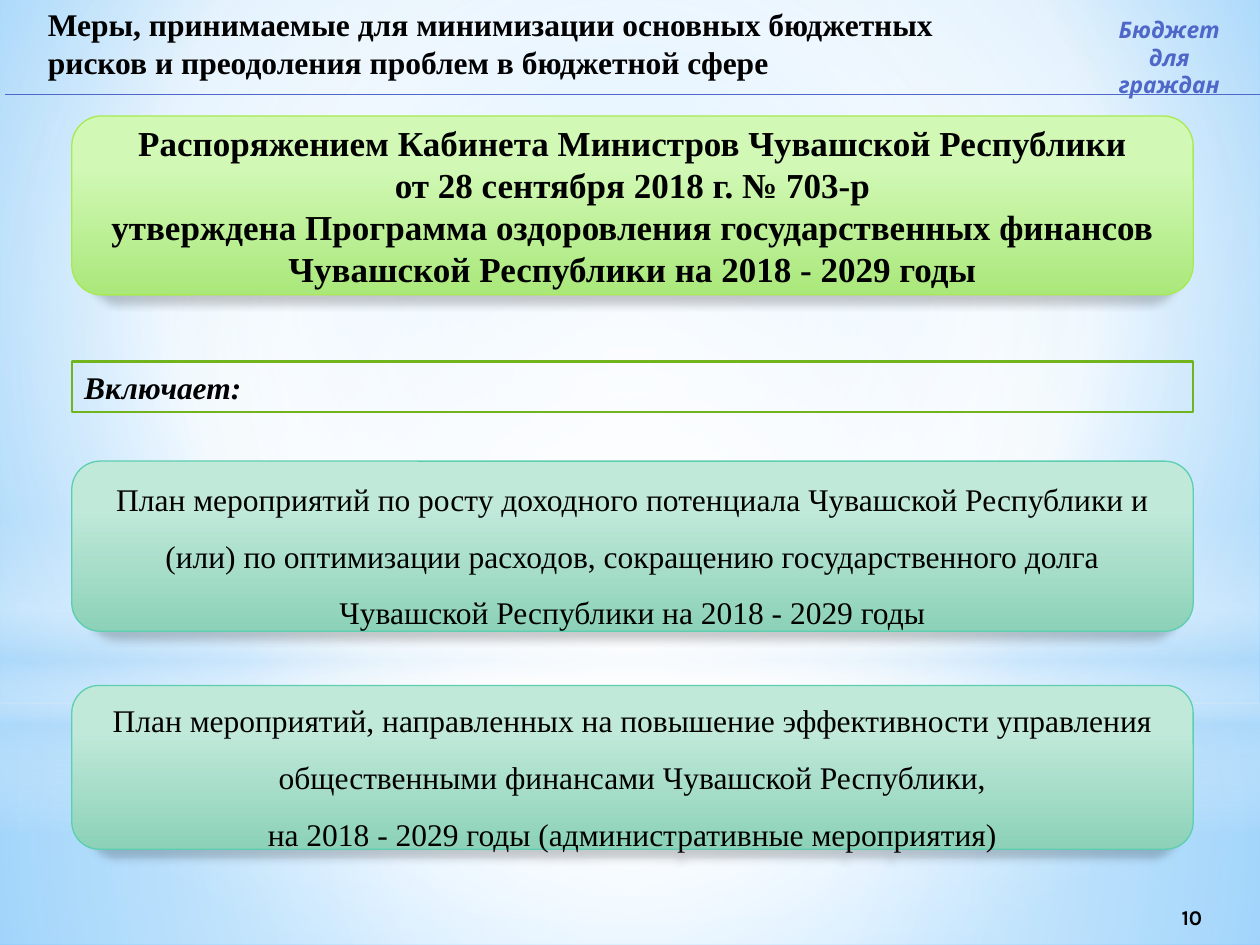
from lxml import etree
from pptx import Presentation, util as u
from pptx.dml.color import RGBColor
from pptx.enum import shapes, text
from pptx.oxml.ns import qn

INK = {"black": "000000", "white": "FFFFFF", "sky": "B4DCFA", "blue": "4E67C8",
       "edge": "72B41D", "lime": "A7EA52", "mint": "5DCEAF"}
SERIF, SANS = "Times New Roman", "Karla"
WIDE, HIGH = 10, 7.5
LEFT, SPAN = 0.57, 8.9

TITLE = ["Меры, принимаемые для минимизации основных бюджетных рисков "
         "и преодоления проблем в бюджетной сфере"]
ORDER = ["Распоряжением Кабинета Министров Чувашской Республики",
         "от 28 сентября 2018 г. № 703-р",
         "утверждена Программа оздоровления государственных финансов "
         "Чувашской Республики на 2018 - 2029 годы"]
GROWTH = ["План мероприятий по росту доходного потенциала Чувашской Республики и (или) "
          "по оптимизации расходов, сокращению государственного долга "
          "Чувашской Республики на 2018 - 2029 годы"]
ADMIN = ["План мероприятий, направленных на повышение эффективности управления "
         "общественными финансами Чувашской Республики,",
         "на 2018 - 2029 годы (административные мероприятия)"]

# Gradient stops: position, colour, opacity (all positions and opacities in percent)
SKY = [(0, "9ED5FF", 100), (60, INK["white"], 100), (100, "5BB9FF", 100)]
GREEN = [(28, "D1F8B5", 100), (100, "AAE87B", 100)]
TEAL = [(28, "C0E9DA", 100), (100, "8CD1B8", 100)]
MID = (50, 50, 50, 50)

# Backdrop: shape, top, height, stops, focus of a circular gradient (None = downwards)
GLOWS = [
    ("RECTANGLE", 5.58, 1.92,
     [(0, INK["white"], 91), (37, INK["white"], 76), (100, INK["sky"], 79)], MID),
    ("RECTANGLE", 0, 5.58,
     [(0, INK["white"], 89), (48, INK["white"], 62), (100, INK["sky"], 79)], MID),
    ("RECTANGLE", 4.12, 2.5,
     [(0, INK["white"], 0), (29, INK["white"], 30), (45, INK["sky"], 40),
      (55, INK["white"], 26), (65, INK["sky"], 60), (100, INK["white"], 0)], None),
    ("OVAL", 1.75, 5.58, [(0, INK["white"], 100), (56, INK["white"], 0)], MID),
]

# Cards: top, height, stops, edge, paragraphs, size, bold, line spacing, inset
CARDS = [
    (3.66, 1.35, TEAL, INK["mint"], GROWTH, 18, False, 1.5, None),
    (5.44, 1.3, TEAL, INK["mint"], ADMIN, 18, False, 1.5, None),
    (0.92, 1.42, GREEN, INK["lime"], ORDER, 20, True, 1, 0),
]


def rgb(tone):
    return RGBColor.from_string(tone)


def sub(node, tag, **attrs):
    return etree.SubElement(node, qn("a:" + tag), {k: str(v) for k, v in attrs.items()})


def tint(node, tone, alpha):
    sub(sub(node, "srgbClr", val=tone), "alpha", val=alpha * 1000)


def blend(fill, props, stops, focus=None):
    """Give a fill a gradient: circular around focus, else top to bottom."""
    fill.solid()
    grad = etree.Element(qn("a:gradFill"), rotWithShape="1")
    items = sub(grad, "gsLst")
    for pos, tone, alpha in stops:
        tint(sub(items, "gs", pos=pos * 1000), tone, alpha)
    if focus:
        sides = {k: v * 1000 for k, v in zip("ltrb", focus)}
        sub(sub(grad, "path", path="circle"), "fillToRect", **sides)
    else:
        sub(grad, "lin", ang=90 * 60000, scaled=0)
    props.replace(props.find(qn("a:solidFill")), grad)


def place(shape, left, top, width, height):
    shape.left, shape.top = u.Inches(left), u.Inches(top)
    shape.width, shape.height = u.Inches(width), u.Inches(height)


def write(shape, lines, size, tone=INK["black"], face=SERIF, bold=True, slant=False,
          align="CENTER", anchor="TOP", gap=1, inset=None):
    frame = shape.text_frame
    frame.word_wrap = True
    frame.auto_size = text.MSO_AUTO_SIZE.NONE
    frame.vertical_anchor = text.MSO_ANCHOR[anchor]
    if inset is not None:
        frame.margin_left = frame.margin_right = u.Inches(inset)
    if inset == 0:
        frame.margin_top = frame.margin_bottom = 0
    for i, line in enumerate(lines):
        para = frame.add_paragraph() if i else frame.paragraphs[0]
        para.alignment = text.PP_ALIGN[align]
        para.line_spacing = gap
        run = para.add_run()
        run.text = line
        font = run.font
        font.name, font.size, font.bold, font.italic = face, u.Pt(size), bold, slant
        font.color.rgb = rgb(tone)


def shade(shape):
    """Add a soft shadow just below the shape."""
    shape.shadow.inherit = False
    list_ = shape.element.spPr.find(qn("a:effectLst"))
    drop = sub(list_, "outerShdw", blurRad=u.Pt(5), dist=u.Pt(4), dir=90 * 60000,
               sx=97000, sy=100000, algn="ctr", rotWithShape=0)
    tint(drop, INK["black"], 20)


def main():
    deck = Presentation()
    deck.slide_width, deck.slide_height = u.Inches(WIDE), u.Inches(HIGH)
    slide = deck.slides.add_slide(deck.slide_layouts[5])
    tree = slide.shapes

    def draw(kind, *box):
        shape = tree.add_shape(shapes.MSO_SHAPE[kind], 0, 0, 0, 0)
        place(shape, *box)
        shape.shadow.inherit = False
        return shape

    def label(box, *args, **opts):
        shape = tree.add_textbox(0, 0, 0, 0)
        place(shape, *box)
        write(shape, *args, **opts)

    back = slide.background.fill
    back.solid()
    blend(back, slide.element.find(".//" + qn("p:bgPr")), SKY, (20, 10, 20, 60))

    for kind, top, height, stops, focus in GLOWS:
        glow = draw(kind, 0, top, WIDE, height)
        glow.line.fill.background()
        blend(glow.fill, glow.element.spPr, stops, focus)

    label((8.91, 7.08, 1.1, 0.4), ["10"], 12, face=SANS, anchor="MIDDLE")

    for top, height, stops, edge, lines, size, bold, gap, inset in CARDS:
        card = draw("ROUNDED_RECTANGLE", LEFT, top, SPAN, height)
        blend(card.fill, card.element.spPr, stops)
        card.line.color.rgb, card.line.width = rgb(edge), u.Pt(0.75)
        shade(card)
        write(card, lines, size, bold=bold, anchor="MIDDLE", gap=gap, inset=inset)

    title = tree.title
    place(title, 0.28, -0.01, 7.87, 0.68)
    write(title, TITLE, 18, align="LEFT")
    title.element.getparent().append(title.element)  # bring above the backdrop

    rule = tree.add_connector(shapes.MSO_CONNECTOR.STRAIGHT, u.Inches(0.04),
                              u.Inches(0.75), u.Inches(10.04), u.Inches(0.75))
    rule.line.color.rgb, rule.line.width = rgb(INK["blue"]), u.Pt(0.75)
    sub(rule.element.spPr, "effectLst")

    lead = draw("RECTANGLE", LEFT, 2.87, SPAN, 0.4)
    lead.fill.background()
    lead.line.color.rgb, lead.line.width = rgb(INK["edge"]), u.Pt(1.25)
    write(lead, ["Включает:"], 18, slant=True, align="LEFT")

    label((8.61, 0.08, 1.34, 0.54), ["Бюджет", "для граждан"], 13, INK["blue"],
          SANS, slant=True, inset=0.15)

    deck.save("out.pptx")


if __name__ == "__main__":
    main()
